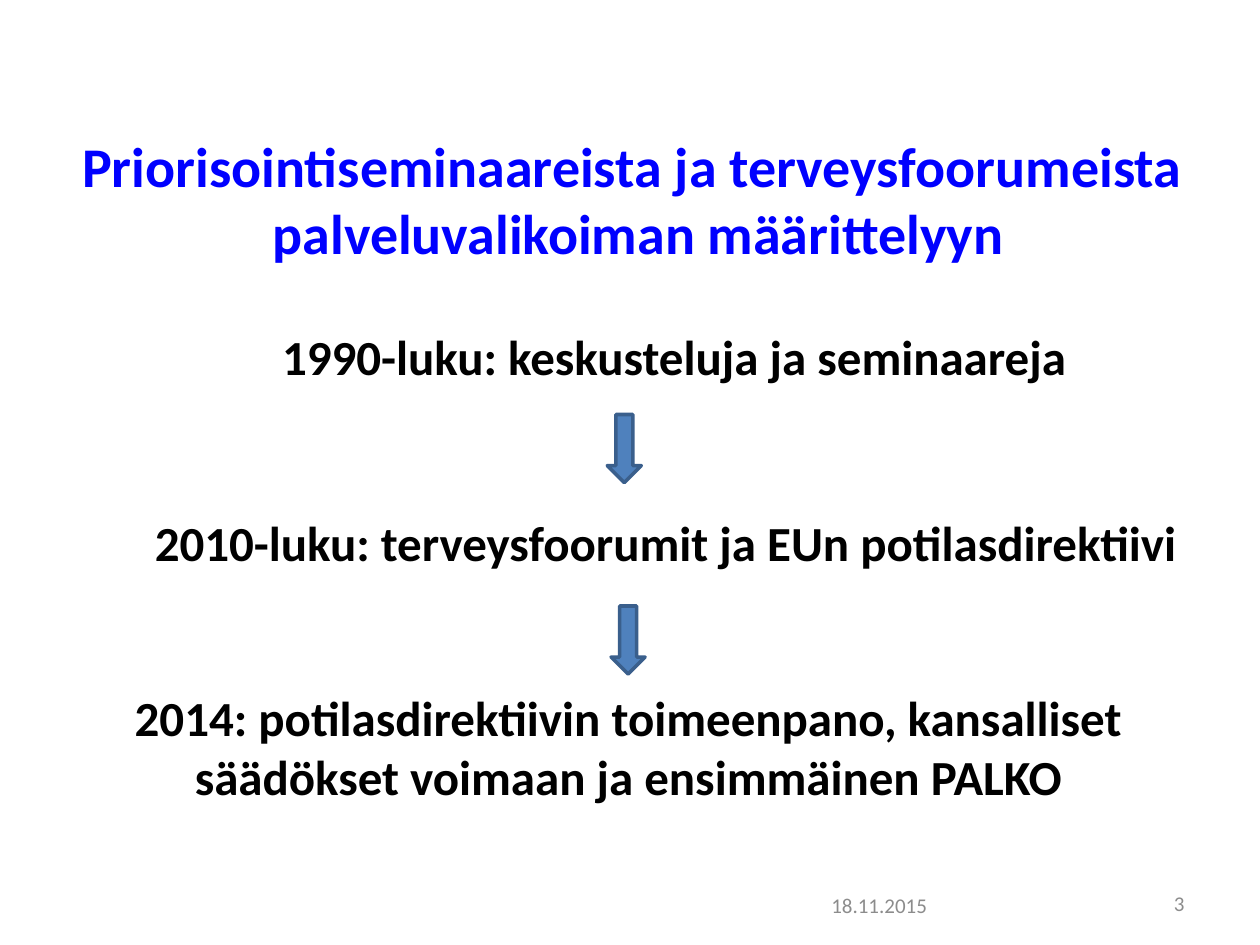
from dataclasses import dataclass

from pptx import Presentation
from pptx.dml.color import RGBColor
from pptx.enum.shapes import MSO_SHAPE
from pptx.enum.text import MSO_ANCHOR, MSO_AUTO_SIZE, PP_ALIGN
from pptx.util import Inches, Pt


@dataclass(frozen=True)
class Theme:
    font: str = "Calibri"
    title_color: RGBColor = RGBColor(0x00, 0x00, 0xFF)
    text_color: RGBColor = RGBColor(0x00, 0x00, 0x00)
    footer_color: RGBColor = RGBColor(0x8C, 0x8C, 0x8C)
    arrow_fill: RGBColor = RGBColor(0x4F, 0x81, 0xBD)
    arrow_line: RGBColor = RGBColor(0x3A, 0x5F, 0x8C)
    title_size: int = 32
    text_size: int = 28
    footer_size: int = 12


THEME = Theme()


def write_lines(frame, lines, size, color, bold=True, align=PP_ALIGN.LEFT):
    """Fill a text frame with one formatted paragraph per line."""
    frame.text = "\n".join(lines)
    for paragraph in frame.paragraphs:
        paragraph.alignment = align
        font = paragraph.font
        font.name, font.size, font.bold = THEME.font, Pt(size), bold
        font.color.rgb = color


def place_title(slide, left, top, width, height, lines):
    title = slide.shapes.title
    title.left, title.top = Inches(left), Inches(top)
    title.width, title.height = Inches(width), Inches(height)
    frame = title.text_frame
    frame.word_wrap = False
    frame.auto_size = MSO_AUTO_SIZE.NONE
    frame.vertical_anchor = MSO_ANCHOR.TOP
    write_lines(frame, lines, THEME.title_size, THEME.title_color,
                align=PP_ALIGN.CENTER)


def add_text_frame(slide, left, top, width, height):
    return slide.shapes.add_textbox(
        Inches(left), Inches(top), Inches(width), Inches(height)).text_frame


def add_stage(slide, left, top, width, height, lines, align=PP_ALIGN.LEFT):
    frame = add_text_frame(slide, left, top, width, height)
    frame.word_wrap = False
    frame.auto_size = MSO_AUTO_SIZE.SHAPE_TO_FIT_TEXT
    write_lines(frame, lines, THEME.text_size, THEME.text_color, align=align)


def add_down_arrow(slide, left, top):
    arrow = slide.shapes.add_shape(
        MSO_SHAPE.DOWN_ARROW, Inches(left), Inches(top),
        Inches(0.27), Inches(0.54))
    arrow.shadow.inherit = False
    arrow.fill.solid()
    arrow.fill.fore_color.rgb = THEME.arrow_fill
    arrow.line.color.rgb = THEME.arrow_line
    arrow.line.width = Pt(2)


def add_footer(slide, left, width, height, text, align=PP_ALIGN.LEFT):
    frame = add_text_frame(slide, left, 6.98, width, height)
    frame.word_wrap = True
    frame.vertical_anchor = MSO_ANCHOR.MIDDLE
    write_lines(frame, [text], THEME.footer_size, THEME.footer_color,
                bold=False, align=align)


def main():
    presentation = Presentation()
    presentation.slide_width = Inches(10)
    presentation.slide_height = Inches(7.5)
    title_only = presentation.slide_layouts[5]
    slide = presentation.slides.add_slide(title_only)

    add_footer(slide, 6.5, 2.33, 0.4, "18.11.2015")
    add_footer(slide, 8.86, 0.64, 0.37, "3", PP_ALIGN.RIGHT)
    place_title(slide, 0.51, 0.99, 9.12, 1.18,
                ["Priorisointiseminaareista ja terveysfoorumeista ",
                 "palveluvalikoiman määrittelyyn"])

    add_stage(slide, 2.14, 2.54, 6.5, 0.57,
              ["1990-luku: keskusteluja ja seminaareja"])
    add_stage(slide, 1.13, 4.02, 8.41, 0.57,
              ["2010-luku: terveysfoorumit ja EUn potilasdirektiivi"])
    add_down_arrow(slide, 4.82, 3.29)
    add_down_arrow(slide, 4.85, 4.81)
    add_stage(slide, 0.92, 5.41, 8.13, 1.04,
              ["2014: potilasdirektiivin toimeenpano, kansalliset",
               "säädökset voimaan ja ensimmäinen PALKO"], PP_ALIGN.CENTER)

    presentation.save("out.pptx")


if __name__ == "__main__":
    main()
